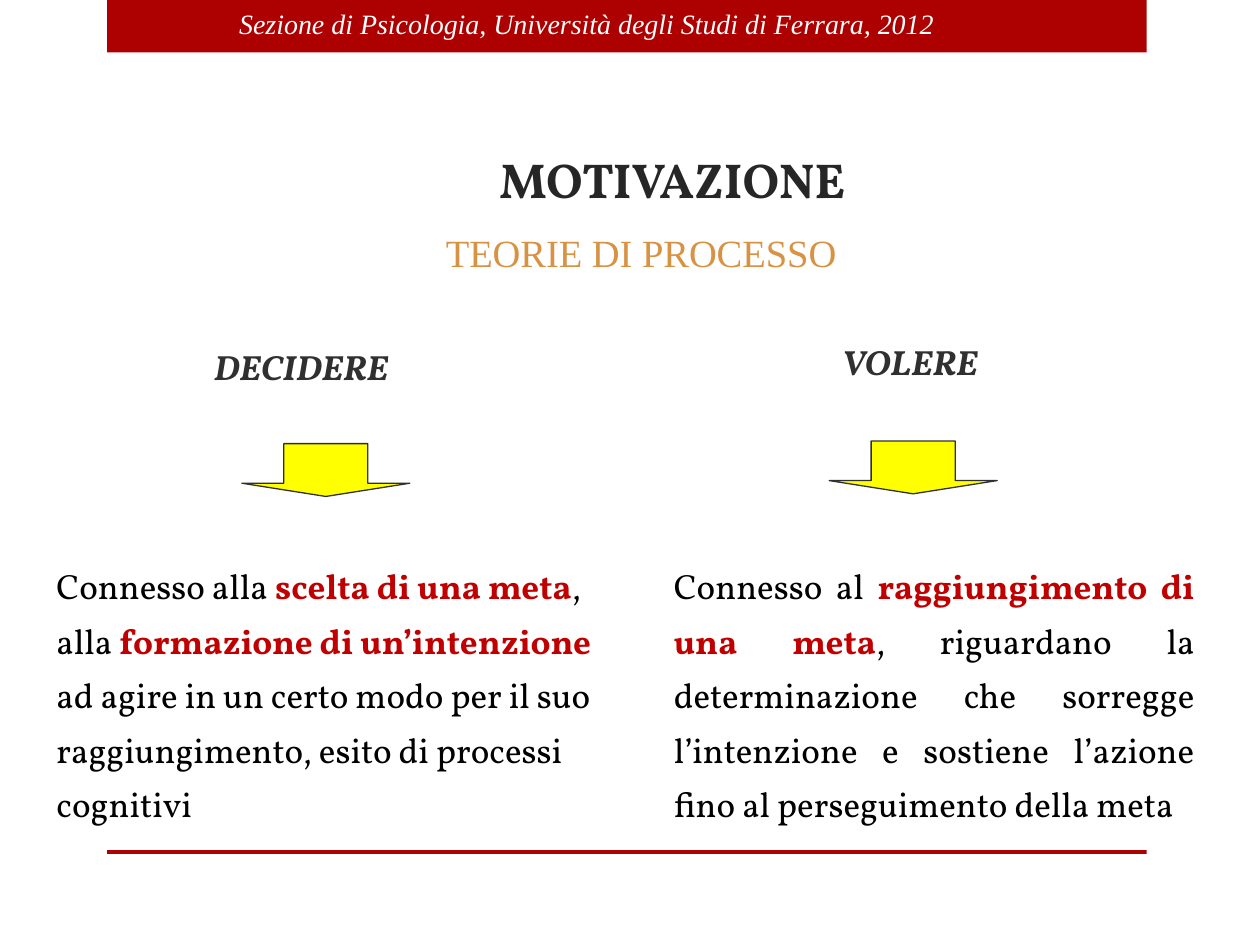
from dataclasses import dataclass

from pptx import Presentation
from pptx.dml.color import RGBColor
from pptx.enum.shapes import MSO_SHAPE
from pptx.enum.text import MSO_ANCHOR, MSO_AUTO_SIZE, PP_ALIGN
from pptx.shapes.base import BaseShape
from pptx.slide import Slide
from pptx.util import Pt


@dataclass(frozen=True)
class Theme:
    serif: str = "Times New Roman"
    display: str = "Vollkorn"
    band: str = "AD0101"
    white: str = "FFFFFF"
    title: str = "262626"
    subtitle: str = "D89243"
    heading: str = "303030"
    body: str = "000000"
    emphasis: str = "C00000"
    arrow: str = "FFFF00"
    band_size: int = 16
    title_size: int = 28
    subtitle_size: int = 22
    body_size: int = 20


@dataclass(frozen=True)
class Box:
    left: float
    top: float
    width: float
    height: float

    def lengths(self) -> tuple:
        return Pt(self.left), Pt(self.top), Pt(self.width), Pt(self.height)


@dataclass(frozen=True)
class Run:
    text: str
    strong: bool = False


@dataclass(frozen=True)
class Column:
    heading: str
    heading_box: Box
    arrow_box: Box
    body_box: Box
    runs: tuple[Run, ...]
    align: PP_ALIGN


THEME = Theme()

COLUMNS = (
    Column(
        "DECIDERE",
        Box(115.2, 193.7, 119.5, 43.9),
        Box(138.2, 253.5, 96, 30.2),
        Box(25.2, 311.8, 329, 166.3),
        (
            Run("Connesso alla "),
            Run("scelta di una meta", True),
            Run(", alla "),
            Run("formazione di un’intenzione ", True),
            Run("ad agire in un certo modo per il suo raggiungimento, "
                "esito di processi cognitivi"),
        ),
        PP_ALIGN.LEFT,
    ),
    Column(
        "VOLERE",
        Box(473.8, 191, 96.5, 43.9),
        Box(473.8, 252, 96, 30.2),
        Box(378, 311.8, 311.8, 158.4),
        (
            Run("Connesso al "),
            Run("raggiungimento di una meta", True),
            Run(", riguardano la determinazione che sorregge l’intenzione "
                "e sostiene l’azione fino al perseguimento della meta"),
        ),
        PP_ALIGN.JUSTIFY,
    ),
)


def add_run(p, text: str, color: str, **fmt) -> None:
    r = p.add_run()
    r.text = text
    r.font.color.rgb = RGBColor.from_string(color)
    for name, value in fmt.items():
        setattr(r.font, name, value)


def add_filled(slide: Slide, kind: MSO_SHAPE, box: Box, fill: str,
               line: str | None = None) -> BaseShape:
    sp = slide.shapes.add_shape(kind, *box.lengths())
    sp.shadow.inherit = False
    sp.fill.solid()
    sp.fill.fore_color.rgb = RGBColor.from_string(fill)
    if line:
        sp.line.color.rgb = RGBColor.from_string(line)
        sp.line.width = Pt(0.75)
    else:
        sp.line.fill.background()
    return sp


def add_label(slide: Slide, box: Box, text: str, color: str, wrap: bool = False,
              **fmt) -> None:
    tf = slide.shapes.add_textbox(*box.lengths()).text_frame
    tf.word_wrap = wrap
    tf.auto_size = MSO_AUTO_SIZE.SHAPE_TO_FIT_TEXT
    add_run(tf.paragraphs[0], text, color, **fmt)


def add_title(slide: Slide, box: Box, text: str) -> None:
    sp = slide.shapes.title
    sp.left, sp.top, sp.width, sp.height = box.lengths()
    tf = sp.text_frame
    tf.auto_size = MSO_AUTO_SIZE.NONE
    tf.vertical_anchor = MSO_ANCHOR.BOTTOM
    p = tf.paragraphs[0]
    p.alignment = PP_ALIGN.CENTER
    add_run(p, text, THEME.title, name=THEME.display,
            size=Pt(THEME.title_size), bold=True)


def add_column(slide: Slide, column: Column) -> None:
    add_label(slide, column.heading_box, column.heading, THEME.heading,
              name=THEME.display, size=Pt(THEME.body_size), bold=True, italic=True)
    sp = add_filled(slide, MSO_SHAPE.RECTANGLE, column.body_box, THEME.white)
    tf = sp.text_frame
    tf.word_wrap = True
    tf.vertical_anchor = MSO_ANCHOR.TOP
    p = tf.paragraphs[0]
    p.alignment = column.align
    p.line_spacing = 1.3
    for run in column.runs:
        color = THEME.emphasis if run.strong else THEME.body
        add_run(p, run.text, color, name=THEME.display,
                size=Pt(THEME.body_size), bold=run.strong)
    arrow = add_filled(slide, MSO_SHAPE.DOWN_ARROW, column.arrow_box,
                       THEME.arrow, THEME.heading)
    arrow.adjustments[0] = 0.5
    arrow.adjustments[1] = 0.25


def main() -> None:
    prs = Presentation()
    prs.slide_width, prs.slide_height = Pt(720), Pt(540)
    slide = prs.slides.add_slide(prs.slide_layouts[5])

    for band in (Box(61.2, 0, 594, 30), Box(61.2, 485.8, 594, 2.2)):
        add_filled(slide, MSO_SHAPE.RECTANGLE, band, THEME.band)
    add_label(slide, Box(129.6, 0, 421.9, 26.6),
              "Sezione di Psicologia, Università degli Studi di Ferrara, 2012",
              THEME.white, wrap=True, name=THEME.serif,
              size=Pt(THEME.band_size), italic=True)
    add_title(slide, Box(59.8, 72, 648.7, 50.4), "MOTIVAZIONE")
    add_label(slide, Box(247.7, 127.4, 254.9, 51.8), "TEORIE DI PROCESSO",
              THEME.subtitle, name=THEME.serif, size=Pt(THEME.subtitle_size))
    for column in COLUMNS:
        add_column(slide, column)

    prs.save("out.pptx")


if __name__ == "__main__":
    main()
